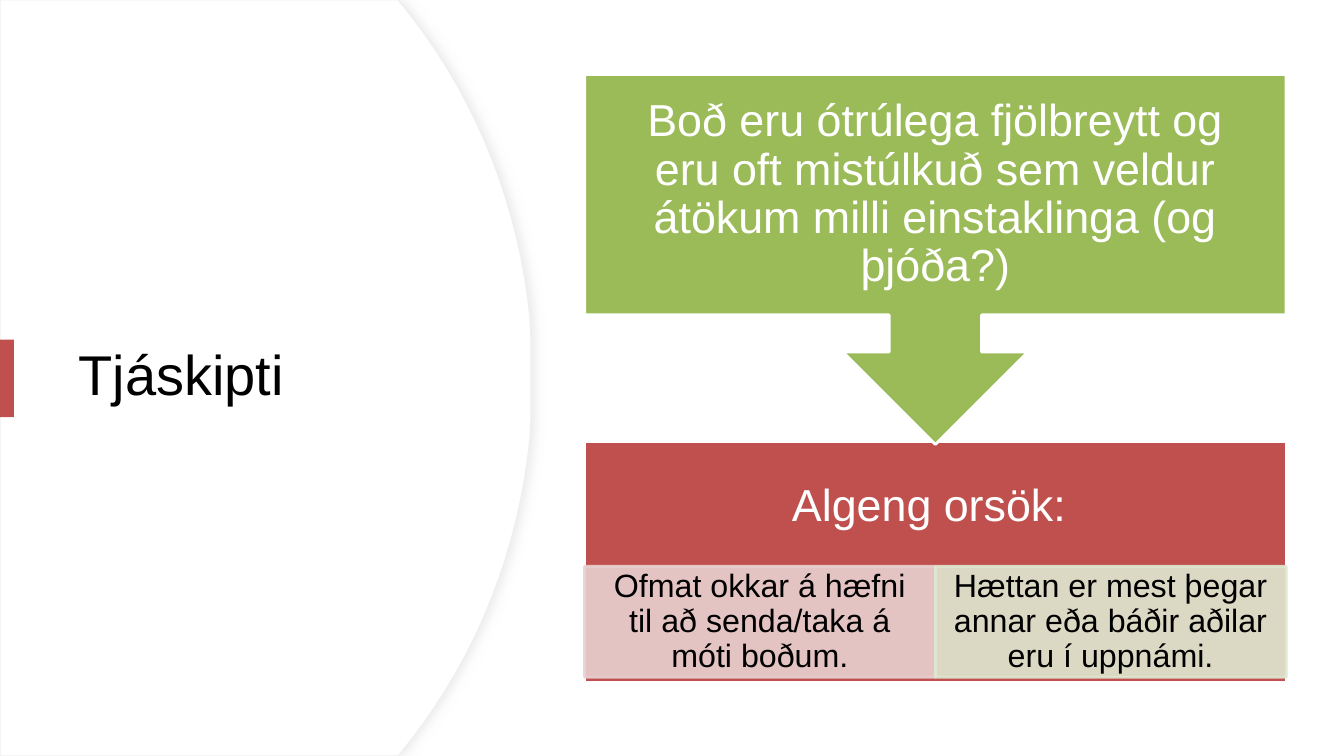
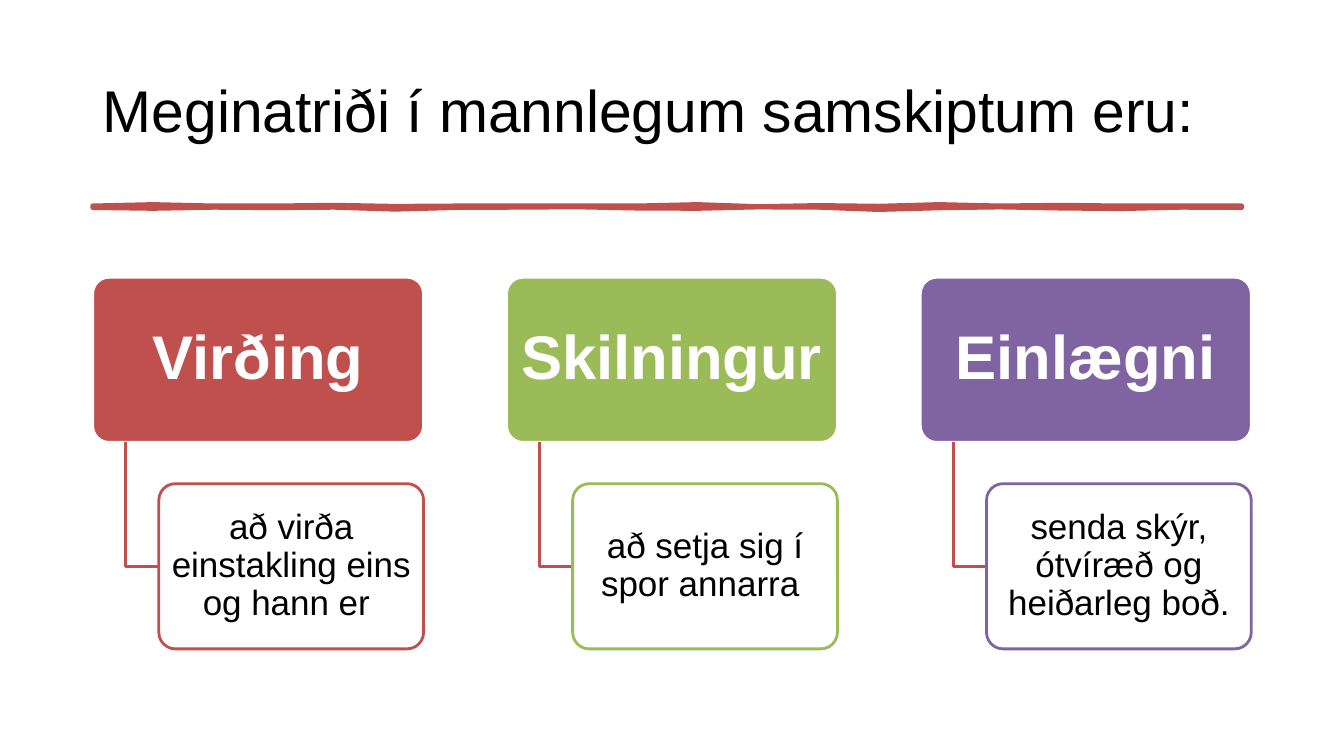
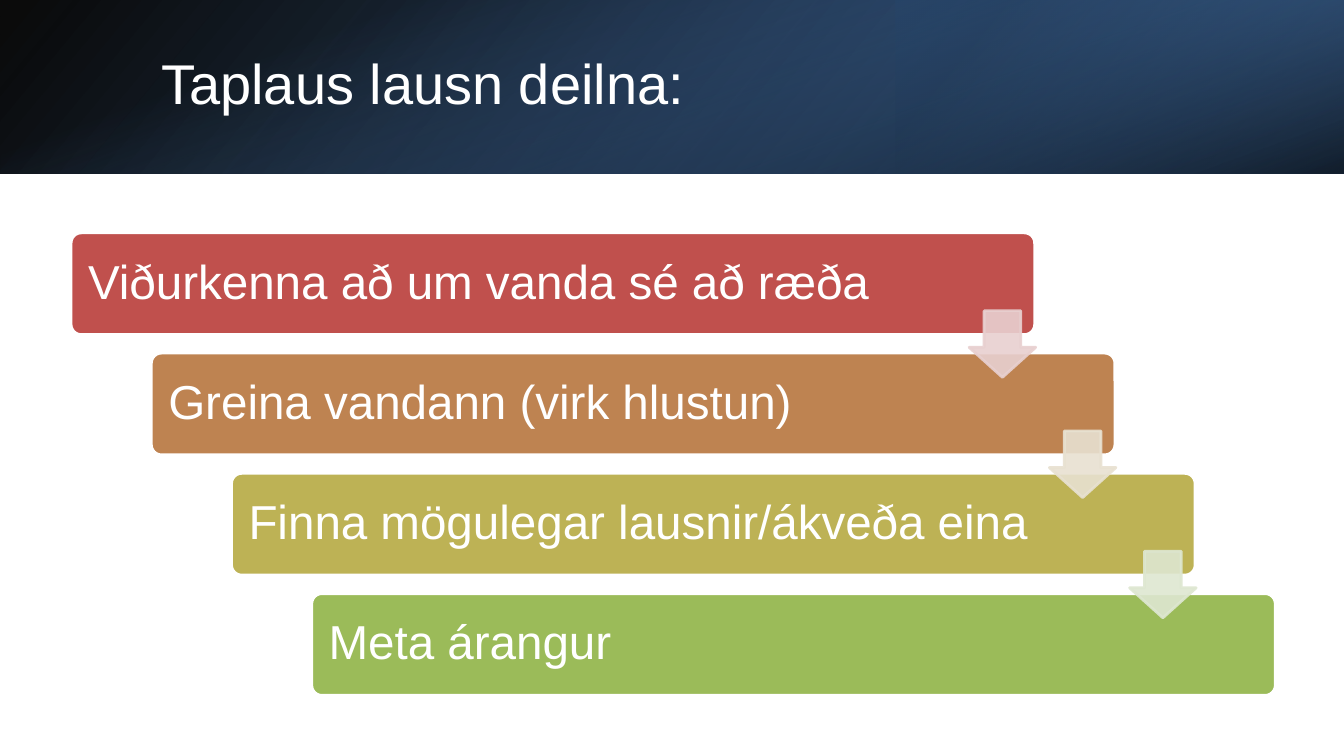
from lxml import etree
from pptx import Presentation
from pptx.dml.color import RGBColor
from pptx.enum.shapes import MSO_SHAPE
from pptx.enum.text import MSO_ANCHOR, PP_ALIGN
from pptx.oxml.ns import qn
from pptx.util import Pt

RECTANGLE = MSO_SHAPE.RECTANGLE
ROUNDED = MSO_SHAPE.ROUNDED_RECTANGLE
CALLOUT = MSO_SHAPE.DOWN_ARROW_CALLOUT
DOWN_ARROW = MSO_SHAPE.DOWN_ARROW
MIDDLE = MSO_ANCHOR.MIDDLE
LEFT = PP_ALIGN.LEFT
CENTER = PP_ALIGN.CENTER

WHITE = RGBColor(0xFF, 0xFF, 0xFF)
BLACK = RGBColor(0x00, 0x00, 0x00)
RED = RGBColor(0xC0, 0x50, 0x4D)
GREEN = RGBColor(0x9B, 0xBB, 0x59)
PURPLE = RGBColor(0x80, 0x64, 0xA2)
ORANGE = RGBColor(0xBE, 0x83, 0x51)
OLIVE = RGBColor(0xBD, 0xB2, 0x55)
PALE_RED = RGBColor(0xE8, 0xD0, 0xD0)
PALE_ORANGE = RGBColor(0xE8, 0xE1, 0xD1)
PALE_GREEN = RGBColor(0xDE, 0xE7, 0xD1)
HAIRLINE = RGBColor(0xEF, 0xEF, 0xEF)
SHADOW_GREY = RGBColor(0xD9, 0xD9, 0xD9)
BLUE = RGBColor(0x4F, 0x81, 0xBD)
MID_BLUE = RGBColor(0x37, 0x60, 0x92)
DEEP_BLUE = RGBColor(0x25, 0x40, 0x61)

FONT = "Arial"
PAGE_WIDTH, PAGE_HEIGHT = 960, 540


def points(values):
    """Turn numbers of points into lengths."""
    return [Pt(value) for value in values]


def add_color(parent, color, alpha=100):
    """Append an RGB colour with an opacity in percent."""
    node = etree.SubElement(parent, qn("a:srgbClr"), val=str(color))
    etree.SubElement(node, qn("a:alpha"), val=str(alpha * 1000))


def paint(shape, fill=None, line=None, width=2, alpha=100):
    """Set fill, outline and opacity, and drop the shadow."""
    shape.shadow.inherit = False
    for part, color in ((shape.fill, fill), (shape.line.fill, line)):
        if color is None:
            part.background()
        else:
            part.solid()
            part.fore_color.rgb = color
    if line is not None:
        shape.line.width = Pt(width)
    if alpha < 100:
        for node in shape.element.spPr.iter(qn("a:srgbClr")):
            etree.SubElement(node, qn("a:alpha"), val=str(alpha * 1000))


def write(shape, text, size, color=BLACK, align=CENTER, bold=False, insets=(7.2, 3.6, 7.2, 3.6)):
    """Write one paragraph in a shape, with insets left, top, right, bottom."""
    frame = shape.text_frame
    sides = ("margin_left", "margin_top", "margin_right", "margin_bottom")
    settings = {"word_wrap": True, "vertical_anchor": MIDDLE, **dict(zip(sides, points(insets)))}
    for name, value in settings.items():
        setattr(frame, name, value)
    para = frame.paragraphs[0]
    for name, value in {"alignment": align, "line_spacing": 0.9, "space_before": Pt(0)}.items():
        setattr(para, name, value)
    span = para.add_run()
    span.text = text
    for name, value in {"name": FONT, "size": Pt(size), "bold": bold}.items():
        setattr(span.font, name, value)
    span.font.color.rgb = color


def add_block(page, kind, box, fill=None, line=None, alpha=100, adjustments=()):
    """Add a painted preset shape."""
    shape = page.shapes.add_shape(kind, *points(box))
    for index, value in enumerate(adjustments):
        shape.adjustments[index] = value
    paint(shape, fill, line, alpha=alpha)
    return shape


def add_outline(page, corners, close=True):
    """Add a freeform through the given corners."""
    start, *rest = [points(corner) for corner in corners]
    builder = page.shapes.build_freeform(*start, scale=1.0)
    builder.add_line_segments(rest, close=close)
    return builder.convert_to_shape()


def add_title(page, text, box, size, color=BLACK):
    """Place the title in front of what is drawn so far."""
    title = page.shapes.title
    for name, value in zip(("left", "top", "width", "height"), points(box)):
        setattr(title, name, value)
    write(title, text, size, color, LEFT)
    title.element.getparent().append(title.element)


def add_disc(page, box):
    """Draw the large disc cut off by the page, with a soft shadow."""
    left, top, width, height = box
    cut, reach, steps = width * 0.75, width * 1.083, 40
    edge = []
    for step in range(steps + 1):
        t = step / steps
        x = cut * ((1 - t) ** 3 + t ** 3) + 3 * reach * t * (1 - t) * 1.005
        y = 3 * 0.285 * t * (1 - t) ** 2 + 3 * 0.715 * t ** 2 * (1 - t) + t ** 3
        edge.append((left + min(x, width), top + height * y))
    disc = add_outline(page, [(left, top), *edge, (left, top + height)])
    paint(disc, WHITE, HAIRLINE, 0.75)
    effects = disc.element.spPr.find(qn("a:effectLst"))
    shadow = etree.SubElement(effects, qn("a:outerShdw"), blurRad=str(Pt(7)), dist=str(Pt(3)), dir="0")
    add_color(shadow, SHADOW_GREY, 50)


def add_cause(page, box):
    """Stack a callout over a headed block with two notes."""
    left, top, width, height = box
    base_top, base_height = top + 262, height - 262
    base = add_block(page, RECTANGLE, (left, base_top, width, base_height), RED, WHITE)
    write(base, "Algeng orsök: ", 32, WHITE, insets=(18, 18, 18, base_height - 75))
    notes = (
        ("Ofmat okkar á hæfni til að senda/taka á móti boðum.", PALE_RED),
        ("Hættan er mest þegar annar eða báðir aðilar eru í uppnámi.", PALE_GREEN),
    )
    for index, (text, color) in enumerate(notes):
        note_box = (left + index * width / 2, base_top + 89.3, width / 2, 79.2)
        note = add_block(page, RECTANGLE, note_box, color, color, 90)
        write(note, text, 23, insets=(13, 2.2, 13, 2.2))
    callout = add_block(page, CALLOUT, (left, top, width, 264.2), GREEN, WHITE)
    message = "Boð eru ótrúlega fjölbreytt og eru oft mistúlkuð sem veldur átökum milli einstaklinga (og þjóða?)"
    write(callout, message, 32, WHITE, insets=(18, 18, 18, 18))


def add_brush_line(page, left, top, width):
    """Draw an uneven brush stroke."""
    upper = (0, -1, 0, 0, -0.5, 0.3, 0, 0, 0, 0, -1, 0.5, -0.3, 0.2, -1, 0, -0.5, 0, 0, 0)
    lower = (1.4, 2, 1.2, 1.5, 1.2, 2.6, 1.4, 1.2, 0.9, 1.8, 2, 1, 1.2, 2.8, 1.6, 1, 1.8, 2.2, 1.2, 1.4)
    step = width / (len(upper) - 1)
    edges = [[(left + i * step, top + dy) for i, dy in enumerate(edge)] for edge in (upper, lower)]
    stroke = add_outline(page, edges[0] + edges[1][::-1])
    paint(stroke, RED, RED, 3.25)
    etree.SubElement(stroke.line.fill._xPr, qn("a:round"))


def add_value(page, box, name, meaning, color):
    """Draw a headline box with its meaning hung below."""
    left, top, width, height = box
    head_height = 118
    indent, stem = width * 0.2, width * 0.1
    body_top = top + head_height * 1.25
    body_middle = body_top + head_height / 2
    head = add_block(page, ROUNDED, (left, top, width, head_height), color, WHITE, adjustments=[0.1])
    write(head, name, 44, WHITE, bold=True, insets=(6, 4.5, 6, 4.5))
    corners = [(left + stem, top + head_height), (left + stem, body_middle), (left + indent, body_middle)]
    paint(add_outline(page, corners, close=False), line=RED)
    body_box = (left + indent, body_top, width * 0.8, top + height - body_top)
    body = add_block(page, ROUNDED, body_box, WHITE, color, adjustments=[0.1])
    write(body, meaning, 25, insets=(3.6, 2.2, 3.6, 2.2))


def add_gradient(page, box, stops, angle, rotation=0, flip=False):
    """Add a rectangle with a linear gradient of (position, colour, opacity)."""
    shape = add_block(page, RECTANGLE, box)
    shape.rotation = rotation
    properties = shape.element.spPr
    if flip:
        properties.find(qn("a:xfrm")).set("flipH", "1")
    gradient = etree.Element(qn("a:gradFill"))
    stop_list = etree.SubElement(gradient, qn("a:gsLst"))
    for position, color, alpha in stops:
        add_color(etree.SubElement(stop_list, qn("a:gs"), pos=str(position * 1000)), color, alpha)
    etree.SubElement(gradient, qn("a:lin"), ang=str(angle * 60000), scaled="0")
    properties.replace(properties.find(qn("a:noFill")), gradient)


def add_band(page, box):
    """Layer three gradients into a dark header band."""
    left, top, width, height = box
    add_gradient(page, box, [(0, BLACK, 96), (100, MID_BLUE, 100)], 140, flip=True)
    third = width / 3
    add_gradient(page, (left + 2 * third, top, third, height),
                 [(19, DEEP_BLUE, 68), (100, BLUE, 79)], 320, 180, True)
    offset = (width - height) / 2
    add_gradient(page, (left + offset, top - offset, height, width),
                 [(23, BLUE, 0), (99, BLACK, 74)], 340, 90)


def add_staircase(page, box, steps, arrow_colors):
    """Set bars in descending steps, with arrows from each to the next."""
    left, top, width, height = box
    bar_width, bar_height, arrow = 688.3, 72.7, 47.5
    run = (width - bar_width) / (len(steps) - 1)
    drop = (height - bar_height) / (len(steps) - 1)
    for index, (text, color) in enumerate(steps):
        bar_box = (left + index * run, top + index * drop, bar_width, bar_height)
        bar = add_block(page, ROUNDED, bar_box, color, WHITE, adjustments=[0.1])
        write(bar, text, 34, WHITE, LEFT, insets=(10, 10, 10, 10))
    for index, color in enumerate(arrow_colors):
        arrow_box = (left + 641.5 + index * run, top + 55.7 + index * drop, arrow, arrow)
        add_block(page, DOWN_ARROW, arrow_box, color, color, 90, [0.55, 0.45])


def build_communication(page):
    """Build the slide on communication."""
    add_disc(page, (0, 0, 379.2, PAGE_HEIGHT))
    add_title(page, "Tjáskipti", (49, 91.4, 283.7, 356.4), 40)
    add_block(page, RECTANGLE, (0, 242.6, 10, 55.4), RED)
    add_cause(page, (417.6, 53.3, 501.1, 434.1))


def build_values(page):
    """Build the slide on the three values."""
    add_title(page, "Meginatriði í mannlegum samskiptum eru:", (66.2, 28.8, 828, 104.4), 42)
    add_brush_line(page, 66.2, 147, 820.8)
    values = (
        ("Virðing", "að virða einstakling eins og hann er ", RED),
        ("Skilningur", "að setja sig í spor annarra ", GREEN),
        ("Einlægni", "senda skýr, ótvíræð og heiðarleg boð.", PURPLE),
    )
    for index, value in enumerate(values):
        add_value(page, (66.2 + index * 295.6, 198, 236.4, 265.5), *value)


def build_solution(page):
    """Build the slide on solving conflicts."""
    add_band(page, (0, 0, PAGE_WIDTH, 124))
    add_title(page, "Taplaus lausn deilna:", (108, 27.4, 790.6, 69), 40, WHITE)
    steps = (
        ("Viðurkenna að um vanda sé að ræða", RED),
        ("Greina vandann (virk hlustun)", ORANGE),
        ("Finna mögulegar lausnir/ákveða eina", OLIVE),
        ("Meta árangur", GREEN),
    )
    add_staircase(page, (50.8, 166.3, 860.2, 330.4), steps, (PALE_RED, PALE_ORANGE, PALE_GREEN))


def main():
    """Build and save the deck."""
    deck = Presentation()
    deck.slide_width, deck.slide_height = points((PAGE_WIDTH, PAGE_HEIGHT))
    title_only = deck.slide_layouts[5]
    for build in (build_communication, build_values, build_solution):
        build(deck.slides.add_slide(title_only))
    deck.save("out.pptx")


if __name__ == "__main__":
    main()
